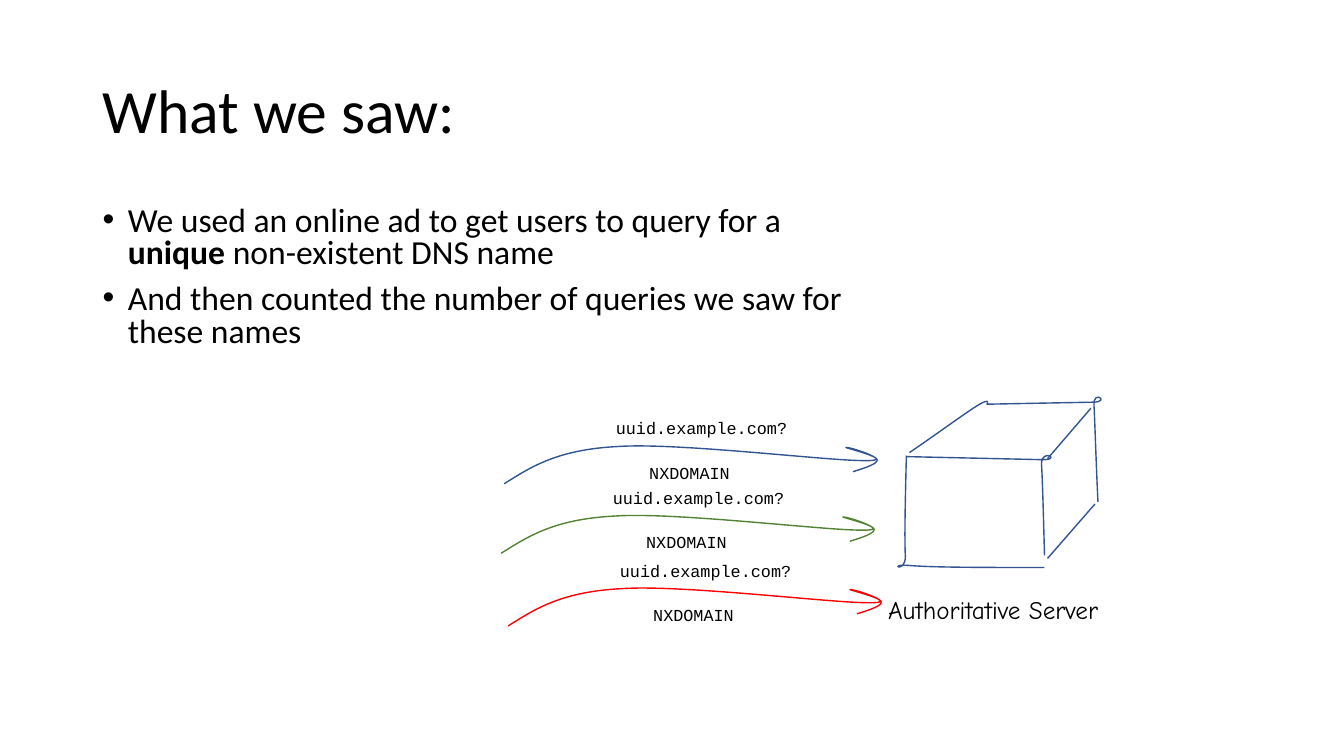
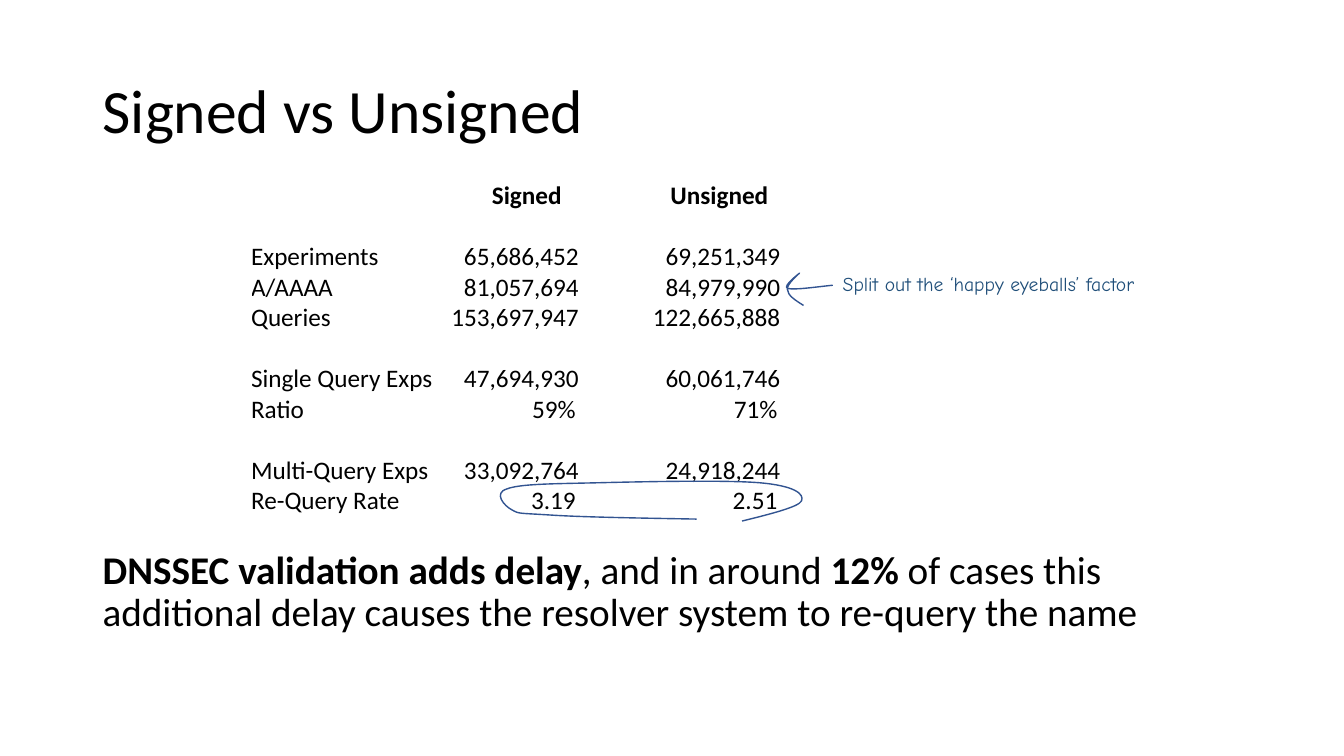
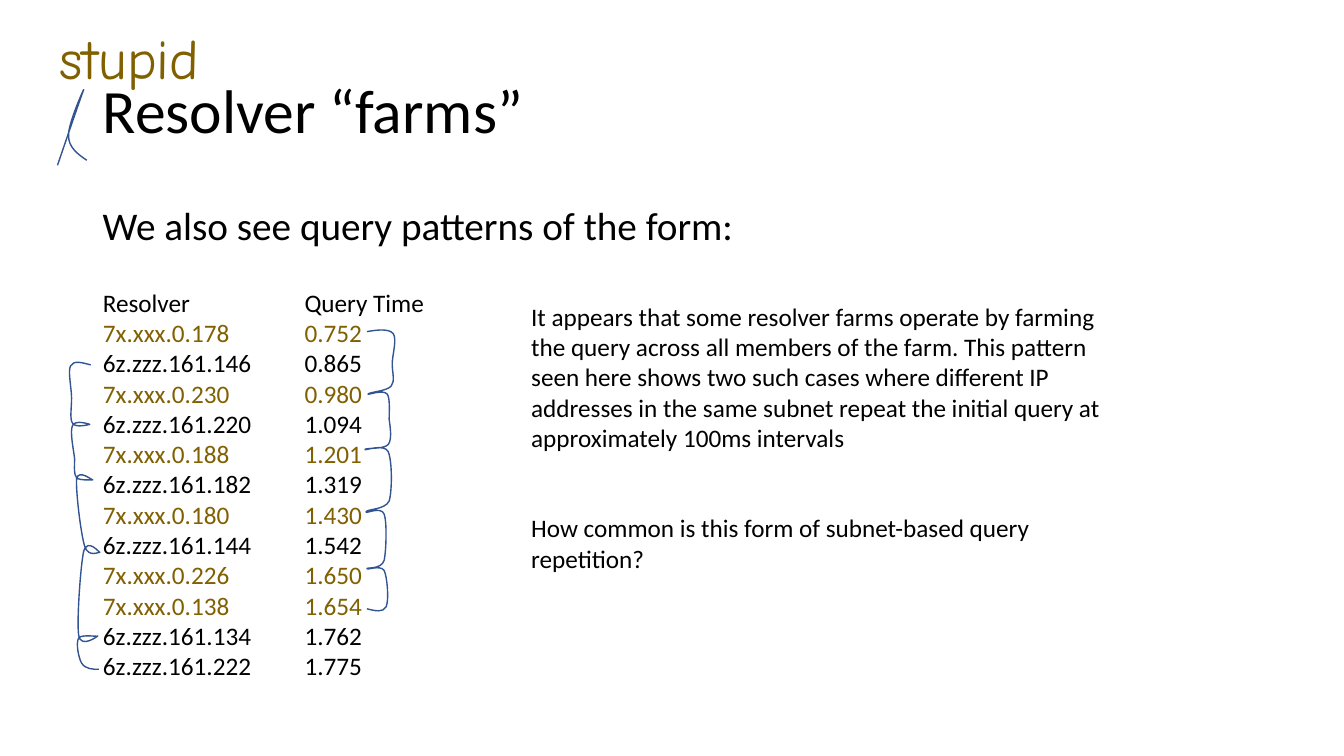
from lxml import etree
from pptx import Presentation
from pptx.dml.color import RGBColor
from pptx.enum import shapes, text
from pptx.oxml import ns
from pptx.util import Inches, Pt

BLACK = RGBColor(0x00, 0x00, 0x00)
BLUE = RGBColor(0x32, 0x54, 0x91)
GREEN = RGBColor(0x54, 0x82, 0x35)
RED = RGBColor(0xFF, 0x00, 0x00)
NOTE_BLUE = RGBColor(0x1F, 0x4E, 0x79)
OLIVE = RGBColor(0x80, 0x60, 0x00)
BODY_FONT, HAND_FONT, CODE_FONT = "Calibri", "Comic Neue", "Courier New"
ROW_HEIGHT = 0.3
GROUP_ROW_HEIGHT = 0.61
EXTENT_STEPS = 24

# Content: **...** marks bold text
FINDINGS = [
    "We used an online ad to get users to query for a **unique** non-existent DNS name",
    "And then counted the number of queries we saw for these names",
]
QUERY, REPLY = "uuid.example.com?", "NXDOMAIN"
EXCHANGES = [(5, 4.8, BLUE), (4.97, 5.49, GREEN), (5.04, 6.21, RED)]

COMPARISON_HEADER = ("", "**Signed**", "**Unsigned**")
HEADER_INSETS = (0, 0.17, 0.12)
COMPARISON_GROUPS = [
    [("Experiments", "65,686,452", "69,251,349"),
     ("A/AAAA", "81,057,694", "84,979,990"),
     ("Queries", "153,697,947", "122,665,888")],
    [("Single Query Exps", "47,694,930", "60,061,746"),
     ("Ratio", "59%", "71%")],
    [("Multi-Query Exps", "33,092,764", "24,918,244"),
     ("Re-Query Rate", "3.19", "2.51")],
]
CONCLUSION = ("**DNSSEC validation adds delay**, and in around **12%** of cases this "
              "additional delay causes the resolver system to re-query the name")

QUERY_LOG = [
    ("Resolver", "Query Time"),
    ("7x.xxx.0.178", "0.752"), ("6z.zzz.161.146", "0.865"),
    ("7x.xxx.0.230", "0.980"), ("6z.zzz.161.220", "1.094"),
    ("7x.xxx.0.188", "1.201"), ("6z.zzz.161.182", "1.319"),
    ("7x.xxx.0.180", "1.430"), ("6z.zzz.161.144", "1.542"),
    ("7x.xxx.0.226", "1.650"), ("7x.xxx.0.138", "1.654"),
    ("6z.zzz.161.134", "1.762"), ("6z.zzz.161.222", "1.775"),
]
FARM_NOTES = [
    "It appears that some resolver farms operate by farming the query across all "
    "members of the farm. This pattern seen here shows two such cases where different "
    "IP addresses in the same subnet repeat the initial query at approximately 100ms "
    "intervals",
    "How common is this form of subnet-based query repetition?",
]

# Pen strokes: start point, then line ends (2 numbers) or Bezier curves (6 numbers)
QUERY_ARROW = [  # relative to its start
    (0, 0), (0.27, -0.17, 0.53, -0.34, 1.13, -0.37),
    (1.72, -0.41, 3.19, -0.23, 3.56, -0.23), (3.94, -0.22, 3.37, -0.36, 3.39, -0.36),
    (3.41, -0.37, 3.69, -0.28, 3.7, -0.24), (3.71, -0.2, 3.59, -0.16, 3.46, -0.12)]
SERVER_CURVES = [
    [(8.99, 4.52), (8.98, 4.93, 8.97, 5.34, 8.98, 5.52),
     (8.98, 5.7, 8.79, 5.59, 9.02, 5.61), (9.25, 5.63, 9.8, 5.63, 10.36, 5.63)],
    [(8.99, 4.53), (10.32, 4.56), (10.55, 4.57, 10.33, 4.44, 10.33, 4.6),
     (10.34, 4.75, 10.35, 5.13, 10.36, 5.51)],
    [(9.02, 4.49), (9.3, 4.3, 9.57, 4.1, 9.7, 4.02),
     (9.83, 3.94, 9.79, 4.01, 9.79, 4.01), (10.84, 3.99),
     (11.02, 3.99, 10.84, 3.86, 10.85, 4.02), (10.86, 4.19, 10.87, 4.58, 10.89, 4.98)],
]
SERVER_EDGES = [(10.86, 5, 10.39, 5.54), (10.82, 4.05, 10.39, 4.55)]
NOTE_ARROW = [
    (8.26, 2.83), (8.07, 2.85, 7.87, 2.88, 7.81, 2.86),
    (7.76, 2.84, 7.93, 2.71, 7.93, 2.71), (7.93, 2.71, 7.8, 2.82, 7.81, 2.87),
    (7.81, 2.93, 7.89, 2.98, 7.97, 3.03)]
RATE_LOOP = [
    (7.36, 5.17), (7.64, 5.1, 7.92, 5.03, 7.95, 4.97),
    (7.98, 4.9, 7.88, 4.82, 7.54, 4.79), (7.2, 4.76, 6.33, 4.78, 5.91, 4.79),
    (5.49, 4.8, 5.16, 4.8, 5.03, 4.85), (4.89, 4.89, 5, 5.02, 5.08, 5.06),
    (5.15, 5.1, 5.15, 5.09, 5.46, 5.11), (5.76, 5.13, 6.33, 5.14, 6.91, 5.15)]
INSERT_MARK = [
    (0.57, 1.64), (0.69, 1.29, 0.81, 0.94, 0.83, 0.89),
    (0.85, 0.84, 0.67, 1.23, 0.68, 1.35), (0.68, 1.46, 0.77, 1.53, 0.86, 1.59)]
TIME_BRACKETS = [
    (3.64, 3.29), (3.75, 3.27, 3.86, 3.26, 3.9, 3.31),
    (3.94, 3.37, 3.89, 3.52, 3.89, 3.61), (3.89, 3.7, 3.92, 3.78, 3.88, 3.83),
    (3.84, 3.88, 3.66, 3.89, 3.65, 3.91), (3.65, 3.92, 3.8, 3.86, 3.84, 3.91),
    (3.87, 3.95, 3.86, 4.08, 3.86, 4.16), (3.87, 4.24, 3.89, 4.36, 3.85, 4.41),
    (3.81, 4.46, 3.62, 4.44, 3.62, 4.46), (3.62, 4.47, 3.81, 4.4, 3.85, 4.48),
    (3.89, 4.57, 3.89, 4.87, 3.86, 4.97), (3.82, 5.06, 3.63, 5.05, 3.63, 5.08),
    (3.62, 5.1, 3.78, 5.02, 3.81, 5.1), (3.84, 5.18, 3.83, 5.47, 3.81, 5.56),
    (3.78, 5.65, 3.64, 5.63, 3.64, 5.64), (3.64, 5.66, 3.77, 5.6, 3.81, 5.66),
    (3.84, 5.72, 3.86, 5.95, 3.83, 6.02), (3.8, 6.08, 3.72, 6.06, 3.64, 6.04)]
RESOLVER_BRACKETS = [
    (0.9, 3.62), (0.82, 3.6, 0.73, 3.57, 0.7, 3.63),
    (0.67, 3.68, 0.71, 3.85, 0.71, 3.95), (0.71, 4.05, 0.69, 4.16, 0.72, 4.2),
    (0.75, 4.25, 0.89, 4.21, 0.89, 4.21), (0.89, 4.21, 0.75, 4.16, 0.72, 4.22),
    (0.69, 4.28, 0.73, 4.46, 0.74, 4.55), (0.74, 4.64, 0.73, 4.7, 0.76, 4.74),
    (0.79, 4.77, 0.92, 4.76, 0.92, 4.76), (0.92, 4.77, 0.78, 4.65, 0.76, 4.75),
    (0.75, 4.86, 0.8, 5.29, 0.84, 5.42), (0.88, 5.54, 0.99, 5.47, 0.99, 5.48),
    (0.99, 5.49, 0.87, 5.33, 0.83, 5.47), (0.8, 5.6, 0.76, 6.16, 0.78, 6.3),
    (0.8, 6.44, 0.97, 6.31, 0.97, 6.31), (0.97, 6.32, 0.81, 6.29, 0.78, 6.33),
    (0.75, 6.38, 0.78, 6.53, 0.81, 6.58), (0.85, 6.64, 0.92, 6.64, 0.98, 6.64)]


def write(frame, paragraphs, size=18, font=BODY_FONT, color=BLACK, line=None,
          before=None, bullet=False, align=None):
    """Fill a text frame; odd pieces between ** are bold."""
    frame.word_wrap = True
    for number, wording in enumerate(paragraphs):
        paragraph = frame.add_paragraph() if number else frame.paragraphs[0]
        paragraph.alignment = align
        paragraph.line_spacing = line
        paragraph.space_before = None if before is None else Pt(before)
        if bullet:
            props = paragraph._p.get_or_add_pPr()
            props.set("marL", str(Inches(0.25)))
            props.set("indent", str(Inches(-0.25)))
            etree.SubElement(props, ns.qn("a:buFont")).set("typeface", "Arial")
            etree.SubElement(props, ns.qn("a:buChar")).set("char", "•")
        for piece, words in enumerate(wording.split("**")):
            if words:
                run = paragraph.add_run()
                run.text = words
                run.font.size, run.font.name = Pt(size), font
                run.font.bold = piece % 2 == 1
                run.font.color.rgb = color


def add_text(slide, box, *paragraphs, anchor=text.MSO_ANCHOR.TOP, **style):
    frame = slide.shapes.add_textbox(*map(Inches, box)).text_frame
    frame.vertical_anchor = anchor
    write(frame, paragraphs, **style)


def add_slide(deck, title):
    slide = deck.slides.add_slide(deck.slide_layouts[6])
    add_text(slide, (0.92, 0.4, 11.5, 1.45), title, size=44, line=0.9,
             anchor=text.MSO_ANCHOR.MIDDLE)
    return slide


def add_plain_table(slide, left, top, widths, heights):
    table = slide.shapes.add_table(
        len(heights), len(widths), Inches(left), Inches(top),
        Inches(sum(widths)), Inches(sum(heights))).table
    table.first_row = table.horz_banding = False
    for column, width in zip(table.columns, widths):
        column.width = Inches(width)
    for row, height in zip(table.rows, heights):
        row.height = Inches(height)
    for cell in table.iter_cells():
        cell.fill.background()
        cell.vertical_anchor = text.MSO_ANCHOR.BOTTOM
        cell.margin_left = cell.margin_right = cell.margin_top = cell.margin_bottom = 0
    return table


def extent(stroke, axis):
    """Least and greatest value that a stroke reaches along one axis."""
    reached = [stroke[0][axis]]
    for part in stroke[1:]:
        if len(part) == 6:
            a, (b, c, d) = reached[-1], part[axis::2]
            for step in range(1, EXTENT_STEPS):
                t = step / EXTENT_STEPS
                s = 1 - t
                reached.append(a * s**3 + 3 * b * t * s * s + 3 * c * t * t * s + d * t**3)
        reached.append(part[-2 + axis])
    return min(reached), max(reached)


def draw_stroke(slide, stroke, color=BLUE, origin=(0, 0)):
    corners = zip(*(extent(stroke, axis) for axis in (0, 1)))
    start, end = [(Inches(origin[0] + x), Inches(origin[1] + y)) for x, y in corners]
    pen = slide.shapes.build_freeform(*start)
    pen.add_line_segments([end], close=False)
    outline = pen.convert_to_shape()
    # Put the curves into the box just built
    route = outline._element.find(".//" + ns.qn("a:path"))
    for segment in list(route):
        route.remove(segment)
    for number, part in enumerate(stroke):
        kind = "a:cubicBezTo" if len(part) == 6 else "a:lnTo" if number else "a:moveTo"
        segment = etree.SubElement(route, ns.qn(kind))
        for x, y in zip(part[::2], part[1::2]):
            point = etree.SubElement(segment, ns.qn("a:pt"))
            point.set("x", str(Inches(origin[0] + x) - start[0]))
            point.set("y", str(Inches(origin[1] + y) - start[1]))
    outline.shadow.inherit = False
    outline.fill.background()
    outline.line.color.rgb = color
    outline.line.width = Pt(1)


def draw_edge(slide, ends):
    edge = slide.shapes.add_connector(shapes.MSO_CONNECTOR.STRAIGHT, *map(Inches, ends))
    edge.line.color.rgb = BLUE
    edge.line.width = Pt(1)
    etree.SubElement(edge._element.spPr, ns.qn("a:effectLst"))


def build_what_we_saw(deck):
    slide = add_slide(deck, "What we saw:")
    add_text(slide, (0.92, 2, 7.69, 1.58), *FINDINGS, size=24, line=0.8, before=10,
             bullet=True)
    # Server box
    for stroke in SERVER_CURVES:
        draw_stroke(slide, stroke)
    for ends in SERVER_EDGES:
        draw_edge(slide, ends)
    add_text(slide, (8.71, 5.85, 2.89, 0.4), "Authoritative Server", font=HAND_FONT)
    # Queries and replies
    for x, y, color in EXCHANGES:
        draw_stroke(slide, QUERY_ARROW, color, (x, y))
        add_text(slide, (x + 1.01, y - 0.7, 1.93, 0.3), QUERY, size=12, font=CODE_FONT)
        add_text(slide, (x + 1.34, y - 0.26, 1.02, 0.3), REPLY, size=12, font=CODE_FONT)


def build_comparison(deck):
    slide = add_slide(deck, "Signed vs Unsigned")
    add_text(slide, (0.92, 5.41, 11.5, 1.34), CONCLUSION, size=28, line=0.9, before=10)
    # Figures: the first row of each group is twice as high
    rows, heights = [COMPARISON_HEADER], [ROW_HEIGHT]
    for group in COMPARISON_GROUPS:
        rows += group
        heights += [GROUP_ROW_HEIGHT] + [ROW_HEIGHT] * (len(group) - 1)
    figures = add_plain_table(slide, 2.49, 1.79, (1.9, 1.35, 2), heights)
    for r, row in enumerate(rows):
        for c, value in enumerate(row):
            cell = figures.cell(r, c)
            write(cell.text_frame, [value],
                  align=text.PP_ALIGN.RIGHT if c else text.PP_ALIGN.LEFT)
            if r == 0:
                cell.margin_right = Inches(HEADER_INSETS[c])
            elif c and "," not in value:
                cell.margin_right = Inches(0.03)
    # Handwritten remarks
    add_text(slide, (8.26, 2.65, 4.43, 0.34), "Split out the ‘happy eyeballs’ factor",
             size=14, font=HAND_FONT, color=NOTE_BLUE)
    draw_stroke(slide, NOTE_ARROW)
    draw_stroke(slide, RATE_LOOP)


def build_farms(deck):
    slide = add_slide(deck, "Resolver “farms”")
    add_text(slide, (0.92, 2, 11.5, 0.66), "We also see query patterns of the form:",
             size=28, line=0.9, before=10)
    # Query log, one subnet in olive
    log = add_plain_table(slide, 1.02, 2.86, (2, 1.9), [ROW_HEIGHT] * len(QUERY_LOG))
    for r, row in enumerate(QUERY_LOG):
        color = OLIVE if row[0].startswith("7x") else BLACK
        for c, value in enumerate(row):
            write(log.cell(r, c).text_frame, [value], color=color)
    add_text(slide, (5.17, 2.94, 5.94, 2.83), *FARM_NOTES, before=43)
    # Handwritten remarks
    draw_stroke(slide, INSERT_MARK)
    add_text(slide, (0.49, 0.18, 1.87, 0.77), "stupid", size=40, font=HAND_FONT,
             color=OLIVE)
    draw_stroke(slide, TIME_BRACKETS)
    draw_stroke(slide, RESOLVER_BRACKETS)


def main():
    deck = Presentation()
    deck.slide_width, deck.slide_height = Inches(13.33), Inches(7.5)
    build_what_we_saw(deck)
    build_comparison(deck)
    build_farms(deck)
    deck.save("out.pptx")


if __name__ == "__main__":
    main()
